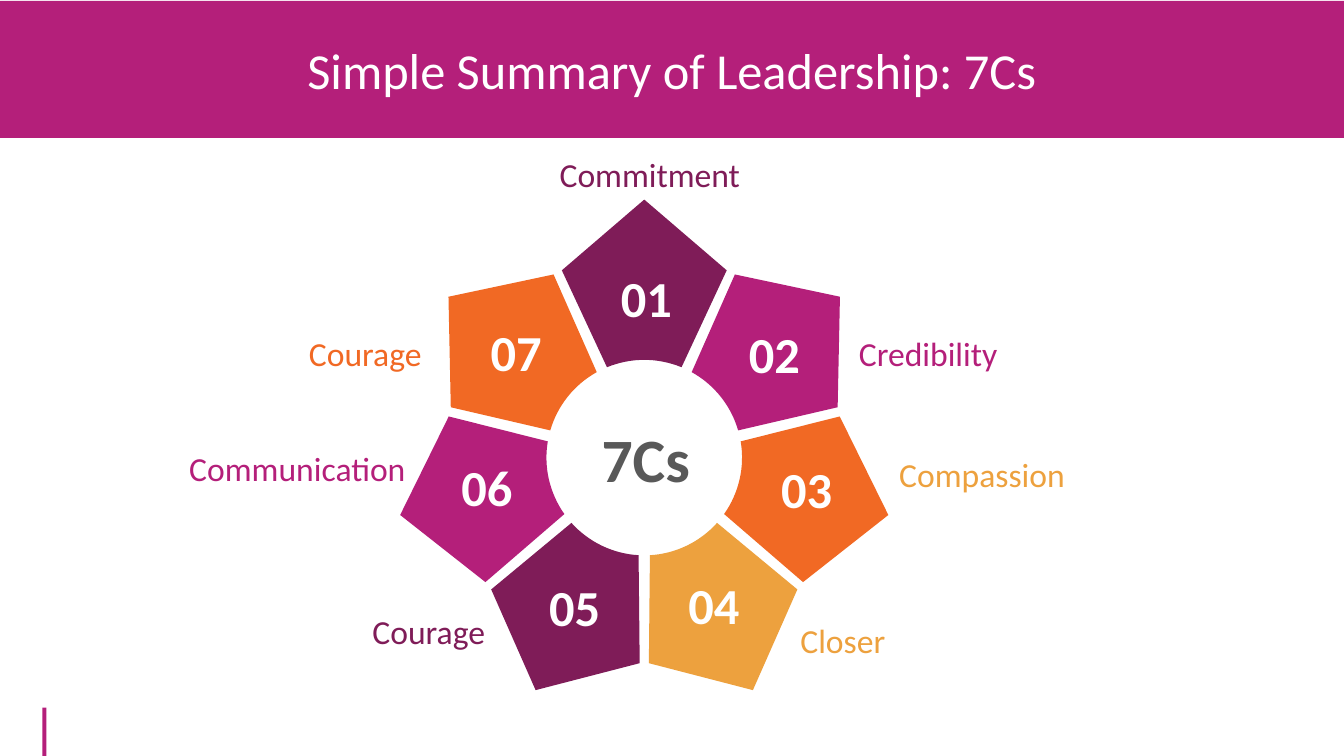
from math import cos, radians, sin

from pptx import Presentation
from pptx.dml.color import RGBColor
from pptx.enum.shapes import MSO_SHAPE
from pptx.enum.text import MSO_ANCHOR, MSO_AUTO_SIZE, PP_ALIGN
from pptx.util import Inches, Pt

RECTANGLE = MSO_SHAPE.RECTANGLE
TOP, BOTTOM = MSO_ANCHOR.TOP, MSO_ANCHOR.BOTTOM
LEFT, CENTER, RIGHT = PP_ALIGN.LEFT, PP_ALIGN.CENTER, PP_ALIGN.RIGHT
NO_AUTOFIT = MSO_AUTO_SIZE.NONE
PLUM = RGBColor(0x7F, 0x1C, 0x58)
MAGENTA = RGBColor(0xB4, 0x1F, 0x7A)
ORANGE = RGBColor(0xF1, 0x69, 0x24)
GOLD = RGBColor(0xED, 0xA1, 0x3E)
GRAY = RGBColor(0x59, 0x59, 0x59)
WHITE = RGBColor(0xFF, 0xFF, 0xFF)

CENTER_X, CENTER_Y = 6.39, 4.54
OUTER_WIDTH_RATIO = 0.97
APEX_RADIUS, SHOULDER_RADIUS, INNER_RADIUS = 2.56, 2.04, 0.97
SHOULDER_ANGLE, INNER_ANGLE = 24.4, 22.4
ARC_STEPS = 16


def wheel_point(radius, angle, width_ratio=1):
    x = CENTER_X + radius * width_ratio * sin(radians(angle))
    y = CENTER_Y - radius * cos(radians(angle))
    return Inches(x), Inches(y)


def write_text(shape, text, box, alignment, anchor, font_format):
    shape.left, shape.top, shape.width, shape.height = map(Inches, box)
    frame = shape.text_frame
    frame.text = text
    frame.word_wrap = True
    frame.auto_size = NO_AUTOFIT
    frame.vertical_anchor = anchor
    paragraph = frame.paragraphs[0]
    paragraph.alignment = alignment
    font = paragraph.runs[0].font
    font.name = "Calibri"
    font.color.rgb = font_format["color"]
    for name in ("size", "bold"):
        setattr(font, name, font_format[name])
    return paragraph


presentation = Presentation()
presentation.slide_width = Inches(13.33)
presentation.slide_height = Inches(7.5)
slide = presentation.slides.add_slide(presentation.slide_layouts[5])
shapes = slide.shapes

bars = [(0.42, 7.02, 0.04, 0.48), (0, 0.01, 13.33, 1.36)]
for box in bars:
    bar = shapes.add_shape(RECTANGLE, *map(Inches, box))
    bar.shadow.inherit = False
    bar.fill.solid()
    bar.fill.fore_color.rgb = MAGENTA
    bar.line.fill.background()

title = shapes.title
bar.element.addnext(title.element)
title_format = {"size": Pt(36), "bold": False, "color": WHITE}
title_paragraph = write_text(title, "Simple Summary of Leadership: 7Cs",
                             (0, 0.41, 13.33, 0.8), CENTER, TOP, title_format)
title_paragraph.line_spacing = 0.9

# label, label box, alignment, label colour, petal colour, number position
petals = [
    ("Commitment", (4.94, 1.37, 3.01, 0.61), CENTER, PLUM, PLUM, (6.04, 2.6)),
    ("Credibility", (8.42, 3.14, 4.91, 0.61), LEFT, MAGENTA, MAGENTA, (7.31, 3.16)),
    ("Compassion", (8.82, 4.34, 2.25, 0.61), LEFT, GOLD, ORANGE, (7.63, 4.5)),
    ("Closer", (7.84, 5.99, 1.27, 0.61), LEFT, GOLD, GOLD, (6.71, 5.65)),
    ("Courage", (3.3, 5.9, 1.61, 0.61), RIGHT, PLUM, PLUM, (5.33, 5.67)),
    ("Communication", (1.26, 4.28, 2.86, 0.61), RIGHT, MAGENTA, MAGENTA, (4.46, 4.48)),
    ("Courage", (2.67, 3.14, 1.61, 0.61), RIGHT, ORANGE, ORANGE, (4.75, 3.14)),
]
for index, (label, label_box, alignment, label_color, petal_color, number_position) in enumerate(petals):
    angle = index * 360 / len(petals)
    apex = wheel_point(APEX_RADIUS, angle, OUTER_WIDTH_RATIO)
    left_shoulder, right_shoulder = [
        wheel_point(SHOULDER_RADIUS, angle + offset, OUTER_WIDTH_RATIO)
        for offset in (-SHOULDER_ANGLE, SHOULDER_ANGLE)
    ]
    inner_arc = [
        wheel_point(INNER_RADIUS, angle + INNER_ANGLE * (1 - 2 * step / ARC_STEPS))
        for step in range(ARC_STEPS + 1)
    ]
    builder = shapes.build_freeform(*apex)
    builder.add_line_segments([right_shoulder, *inner_arc, left_shoulder], close=True)
    petal = builder.convert_to_shape()
    petal.shadow.inherit = False
    petal.fill.solid()
    petal.fill.fore_color.rgb = petal_color
    petal.line.fill.background()

    label_format = {"size": Pt(24), "bold": False, "color": label_color}
    write_text(shapes.add_textbox(0, 0, 0, 0), label, label_box, alignment, BOTTOM, label_format)
    number_format = {"size": Pt(36), "bold": True, "color": WHITE}
    write_text(shapes.add_textbox(0, 0, 0, 0), f"{index + 1:02}",
               (*number_position, 0.74, 0.71), CENTER, TOP, number_format)

hub_format = {"size": Pt(44), "bold": True, "color": GRAY}
write_text(shapes.add_textbox(0, 0, 0, 0), "7Cs", (5.75, 3.94, 1.31, 1.02), CENTER, BOTTOM, hub_format)

presentation.save("out.pptx")
